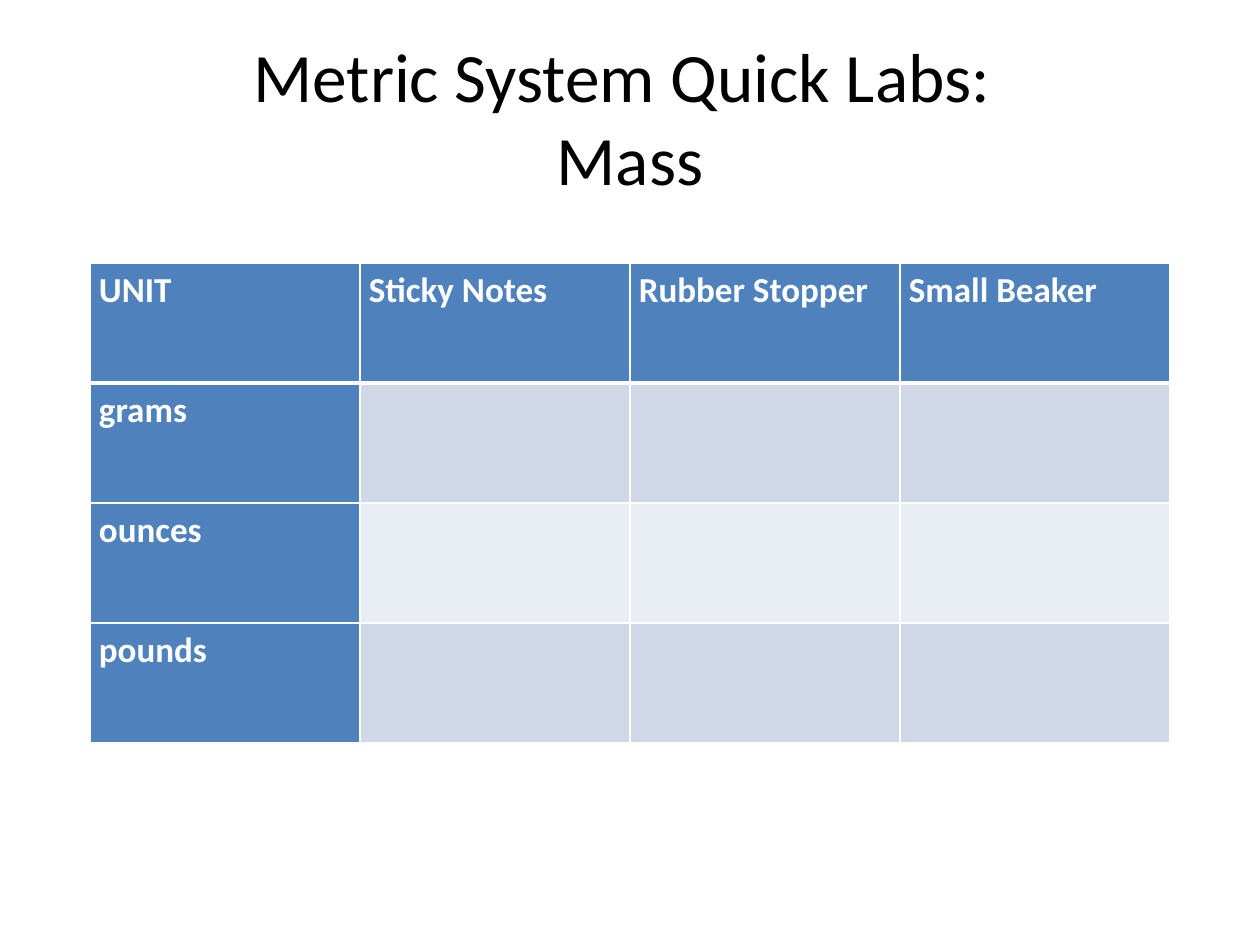
import pptx
import pptx.dml.color
import pptx.enum.text
import pptx.oxml.ns
import pptx.util
import lxml.etree

TITLE_LINES = ["Metric System Quick Labs: ", "Mass"]
HEADERS = ["UNIT", "Sticky Notes", "Rubber Stopper", "Small Beaker"]
UNITS = ["grams", "ounces", "pounds"]

FONT = "Calibri"
BLACK = pptx.dml.color.RGBColor(0x00, 0x00, 0x00)
WHITE = pptx.dml.color.RGBColor(0xFF, 0xFF, 0xFF)
BLUE = pptx.dml.color.RGBColor(0x4F, 0x81, 0xBD)
BANDS = [
    pptx.dml.color.RGBColor(0xD0, 0xD8, 0xE8),
    pptx.dml.color.RGBColor(0xE9, 0xED, 0xF4),
]

PX = pptx.util.Inches(1) / 126
TITLE_BOX = (63, 38, 1134, 157)
TABLE_LEFT, TABLE_TOP = 90, 263
COLUMN_WIDTH, ROW_HEIGHT = 270, 120
CELL_INSET = 9


def px(length):
    return pptx.util.Emu(round(length * PX))


def style_run(run, size, color, bold=False):
    run.font.name = FONT
    run.font.size = pptx.util.Pt(size)
    run.font.color.rgb = color
    run.font.bold = bold


def add_border(cell, side, width):
    properties = cell._tc.get_or_add_tcPr()
    line = lxml.etree.SubElement(properties, pptx.oxml.ns.qn(f"a:ln{side}"))
    line.set("w", str(pptx.util.Pt(width)))
    fill = lxml.etree.SubElement(line, pptx.oxml.ns.qn("a:solidFill"))
    color = lxml.etree.SubElement(fill, pptx.oxml.ns.qn("a:srgbClr"))
    color.set("val", str(WHITE))


def fill_title(title):
    title.left, title.top, title.width, title.height = map(px, TITLE_BOX)
    title.text_frame.vertical_anchor = pptx.enum.text.MSO_ANCHOR.MIDDLE
    paragraph = title.text_frame.paragraphs[0]
    paragraph.alignment = pptx.enum.text.PP_ALIGN.CENTER
    for index, line in enumerate(TITLE_LINES):
        if index:
            paragraph.add_line_break()
        run = paragraph.add_run()
        run.text = line
        style_run(run, 39.6, BLACK)


def fill_cell(cell, text, row, column):
    cell.margin_left = cell.margin_right = px(CELL_INSET)
    cell.margin_top = cell.margin_bottom = 0
    for side in "LRTB":
        header_edge = (row, side) in [(0, "B"), (1, "T")]
        add_border(cell, side, 3 if header_edge else 1)
    cell.fill.solid()
    is_label = row == 0 or column == 0
    cell.fill.fore_color.rgb = BLUE if is_label else BANDS[(row - 1) % 2]
    if text:
        paragraph = cell.text_frame.paragraphs[0]
        paragraph.line_spacing = 1.15
        run = paragraph.add_run()
        run.text = text
        style_run(run, 20, WHITE, bold=True)


def add_lab_table(slide):
    rows = [HEADERS] + [[unit] + [""] * (len(HEADERS) - 1) for unit in UNITS]
    table = slide.shapes.add_table(
        len(rows), len(HEADERS), px(TABLE_LEFT), px(TABLE_TOP),
        px(COLUMN_WIDTH * len(HEADERS)), px(ROW_HEIGHT * len(rows)),
    ).table
    table.first_col = True
    for column in table.columns:
        column.width = px(COLUMN_WIDTH)
    for row_index, texts in enumerate(rows):
        table.rows[row_index].height = px(ROW_HEIGHT)
        for column_index, text in enumerate(texts):
            cell = table.cell(row_index, column_index)
            fill_cell(cell, text, row_index, column_index)


def main():
    presentation = pptx.Presentation()
    presentation.slide_width = pptx.util.Inches(10)
    presentation.slide_height = pptx.util.Inches(7.5)
    slide = presentation.slides.add_slide(presentation.slide_layouts[5])
    fill_title(slide.shapes.title)
    add_lab_table(slide)
    presentation.save("out.pptx")


if __name__ == "__main__":
    main()
